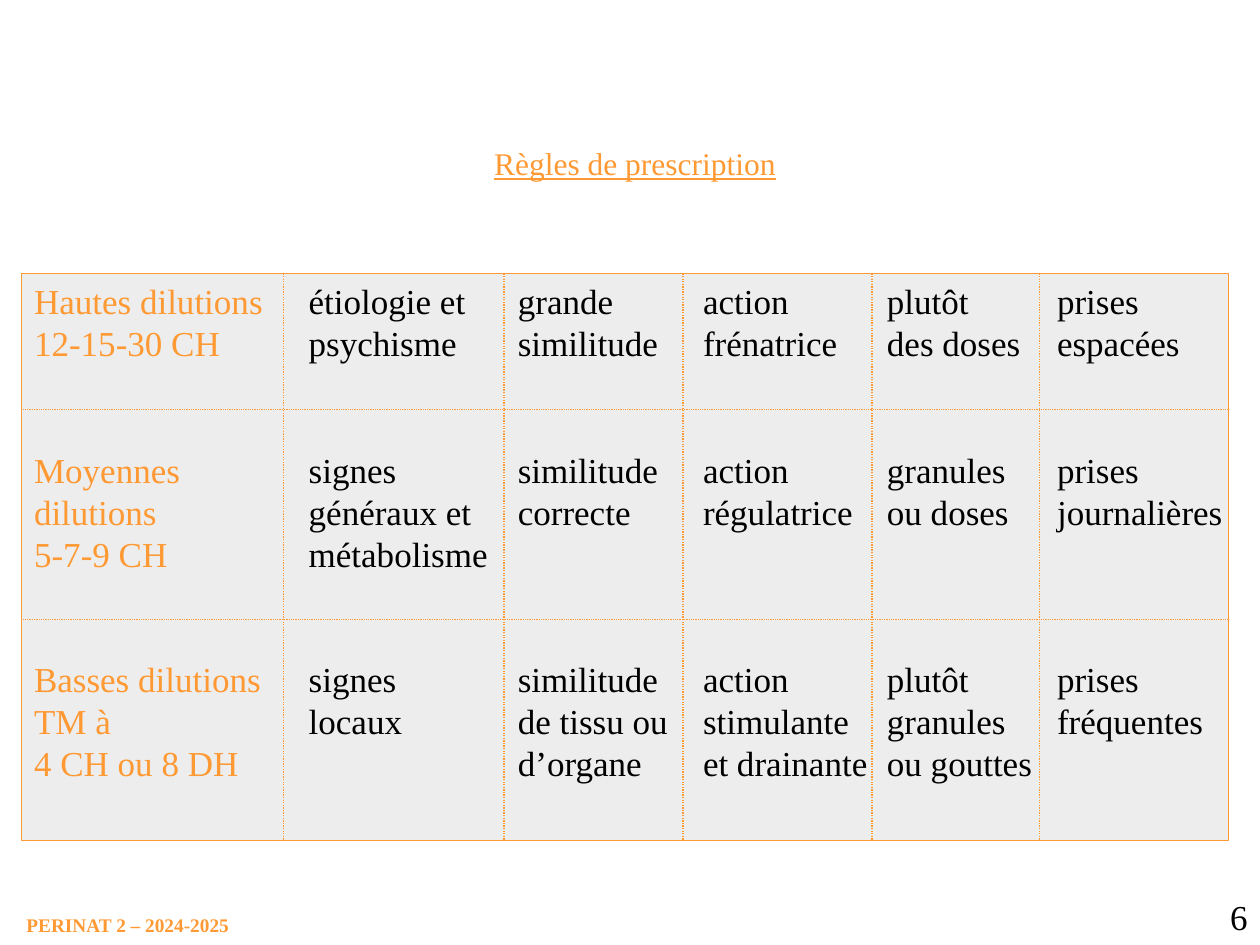
import pptx
import pptx.util
import pptx.dml.color
import pptx.enum.dml
import pptx.enum.shapes
import pptx.enum.text
import pptx.oxml.ns
import lxml.etree

Inches = pptx.util.Inches
Pt = pptx.util.Pt
PP_ALIGN = pptx.enum.text.PP_ALIGN
qn = pptx.oxml.ns.qn
COLORS = {"accent": "FF9933", "text": "000000", "panel": "DDDDDD"}
NO_GRID_STYLE = "{2D5ABB26-0587-4C30-8999-92F81FD0307C}"


def rgb(name):
    return pptx.dml.color.RGBColor.from_string(COLORS[name])


def format_paragraph(paragraph, text, color, **font_values):
    paragraph.text = text
    values = {"name": "Times New Roman", "size": Pt(20), **font_values}
    for attribute, value in values.items():
        setattr(paragraph.font, attribute, value)
    paragraph.font.color.rgb = rgb(color)


presentation = pptx.Presentation()
presentation.slide_width = Inches(10)
presentation.slide_height = Inches(7.5)
slide = presentation.slides.add_slide(presentation.slide_layouts[5])

title = slide.shapes.title
title_place = {"left": 2.58, "top": 1.09, "width": 4.92, "height": 0.4}
for attribute, value in title_place.items():
    setattr(title, attribute, Inches(value))
title.text_frame.vertical_anchor = pptx.enum.text.MSO_ANCHOR.MIDDLE
title_paragraph = title.text_frame.paragraphs[0]
format_paragraph(title_paragraph, "Règles de prescription", "accent",
                 size=Pt(18), underline=True)
title_paragraph.alignment = PP_ALIGN.CENTER

rows = [
    ["Hautes dilutions\n12-15-30 CH", "étiologie et\npsychisme", "grande\nsimilitude",
     "action\nfrénatrice", "plutôt\ndes doses", "prises\nespacées"],
    ["Moyennes\ndilutions\n5-7-9 CH", "signes\ngénéraux et\nmétabolisme",
     "similitude\ncorrecte", "action\nrégulatrice", "granules\nou doses",
     "prises\njournalières"],
    ["Basses dilutions\nTM à\n4 CH ou 8 DH", "signes\nlocaux",
     "similitude\nde tissu ou\nd’organe", "action\nstimulante\net drainante",
     "plutôt\ngranules\nou gouttes", "prises\nfréquentes"],
]
column_edges = [0.17, 2.25, 4, 5.42, 6.92, 8.25, 9.75]
row_edges = [2.17, 3.25, 4.92, 6.67]
left_margins = [0.1, 0.2, 0.11, 0.16, 0.12, 0.14]
top_margins = [0.05, 0.31, 0.3]
left, right = column_edges[0], column_edges[-1]
top, bottom = row_edges[0], row_edges[-1]
grid_place = [Inches(value) for value in (left, top, right - left, bottom - top)]

panel = slide.shapes.add_shape(pptx.enum.shapes.MSO_SHAPE.RECTANGLE, *grid_place)
panel.shadow.inherit = False
panel.fill.solid()
panel.fill.fore_color.rgb = rgb("panel")
panel_color = next(panel._element.spPr.iter(qn("a:srgbClr")))
lxml.etree.SubElement(panel_color, qn("a:alpha"), val="50000")
panel.line.color.rgb = rgb("accent")
panel.line.width = Pt(0.75)

dividers = [(x, top, x, bottom, 0.75) for x in column_edges[1:-1]]
dividers += [(left, y, right, y, 0.5) for y in row_edges[1:-1]]
for *ends, width in dividers:
    divider = slide.shapes.add_connector(
        pptx.enum.shapes.MSO_CONNECTOR.STRAIGHT, *[Inches(value) for value in ends])
    divider.line.color.rgb = rgb("accent")
    divider.line.width = Pt(width)
    divider.line.dash_style = pptx.enum.dml.MSO_LINE.ROUND_DOT
    lxml.etree.SubElement(divider._element.spPr, qn("a:effectLst"))

table_frame = slide.shapes.add_table(len(rows), len(left_margins), *grid_place)
table = table_frame.table
table.first_row = False
table.horz_banding = False
next(table_frame._element.iter(qn("a:tableStyleId"))).text = NO_GRID_STYLE
for column, start, end in zip(table.columns, column_edges, column_edges[1:]):
    column.width = Inches(end - start)
for row, start, end in zip(table.rows, row_edges, row_edges[1:]):
    row.height = Inches(end - start)

for row_index, texts in enumerate(rows):
    for column_index, text in enumerate(texts):
        cell = table.cell(row_index, column_index)
        cell.fill.background()
        margins = {"margin_left": left_margins[column_index], "margin_right": 0,
                   "margin_top": top_margins[row_index], "margin_bottom": 0}
        for attribute, value in margins.items():
            setattr(cell, attribute, Inches(value))
        color = "accent" if column_index == 0 else "text"
        for line_index, line_text in enumerate(text.split("\n")):
            frame = cell.text_frame
            paragraph = frame.add_paragraph() if line_index else frame.paragraphs[0]
            format_paragraph(paragraph, line_text, color)
            paragraph.line_spacing = Pt(24)

footer = slide.shapes.add_textbox(Inches(0.21), Inches(7.25), Inches(1.64), Inches(0.19))
for side in ("left", "right", "top", "bottom"):
    setattr(footer.text_frame, "margin_" + side, 0)
footer.text_frame.word_wrap = False
format_paragraph(footer.text_frame.paragraphs[0], "PERINAT 2 – 2024-2025", "accent",
                 size=Pt(11), bold=True)

page_number = slide.shapes.add_textbox(Inches(9.17), Inches(7.06), Inches(0.83), Inches(0.43))
page_number.text_frame.word_wrap = True
number_paragraph = page_number.text_frame.paragraphs[0]
format_paragraph(number_paragraph, "6", "text")
number_paragraph.alignment = PP_ALIGN.RIGHT

presentation.save("out.pptx")
